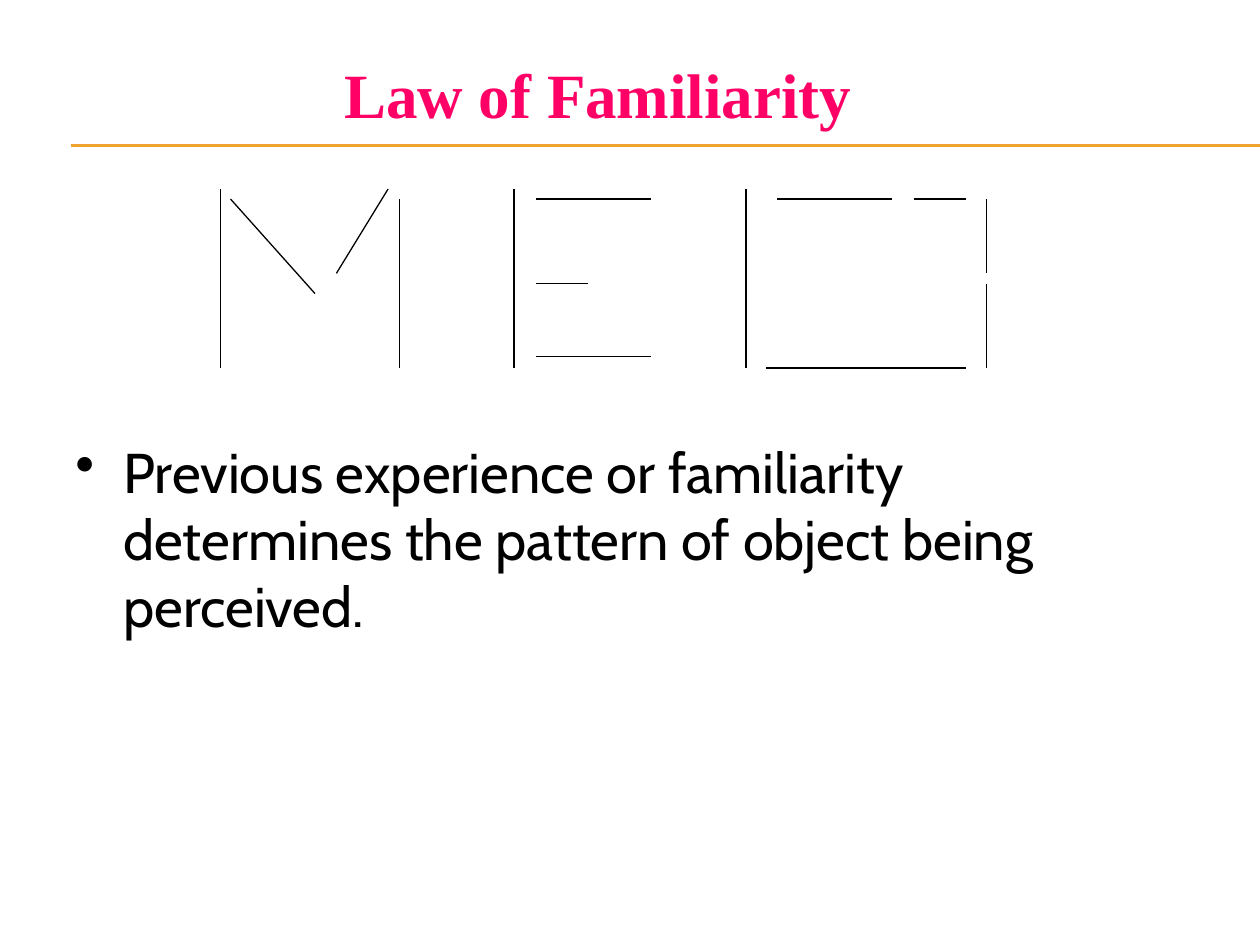
from typing import NamedTuple

from lxml import etree
from pptx import Presentation
from pptx.dml.color import RGBColor
from pptx.enum.shapes import MSO_CONNECTOR as Connector
from pptx.enum.text import MSO_ANCHOR as Anchor, PP_ALIGN as Align
from pptx.oxml.ns import qn
from pptx.slide import Slide
from pptx.text.text import _Paragraph as Paragraph
from pptx.util import Inches, Pt

PINK = RGBColor(0xFF, 0x00, 0x66)
AMBER = RGBColor(0xF0, 0xA2, 0x2E)
BLACK = RGBColor(0x00, 0x00, 0x00)


class Stroke(NamedTuple):
    x1: float
    y1: float
    x2: float
    y2: float


class TextBlock(NamedTuple):
    text: str
    left: float
    top: float
    width: float
    height: float
    font: str
    size: int
    color: RGBColor
    bold: bool = False
    wrap: bool = True
    margin_top: float = 0.05


# Two rules that nearly coincide under the title
RULES = [Stroke(0.56, y, 10, y) for y in (1.15, 1.16)]

# Broken outlines that read as familiar letters
TOP, UPPER, BOTTOM = 1.5, 1.58, 2.92
LETTER_M = [
    Stroke(1.75, TOP, 1.75, BOTTOM),
    Stroke(1.83, UPPER, 2.5, 2.33),
    Stroke(3.08, TOP, 2.67, 2.17),
    Stroke(3.17, UPPER, 3.17, BOTTOM),
]
LETTER_E = [
    Stroke(4.08, TOP, 4.08, BOTTOM),
    Stroke(4.25, UPPER, 5.17, UPPER),
    Stroke(4.25, 2.25, 4.67, 2.25),
    Stroke(4.25, 2.83, 5.17, 2.83),
]
BROKEN_BOX = [
    Stroke(5.92, TOP, 5.92, BOTTOM),
    Stroke(6.17, UPPER, 7.08, UPPER),
    Stroke(7.25, UPPER, 7.67, UPPER),
    Stroke(7.83, UPPER, 7.83, 2.17),
    Stroke(7.83, 2.25, 7.83, BOTTOM),
    Stroke(6.08, BOTTOM, 7.67, BOTTOM),
]

TITLE = TextBlock("Law of Familiarity", 2.33, 0.33, 4.83, 0.92,
                  "Times New Roman", 36, PINK, bold=True, wrap=False,
                  margin_top=0.11)
BODY = TextBlock("Previous experience or familiarity determines the pattern "
                 "of object being perceived.", 0.5, 3.42, 9, 2,
                 "Cabin", 32, BLACK)


def draw_stroke(slide: Slide, stroke: Stroke, color: RGBColor) -> None:
    line = slide.shapes.add_connector(
        Connector.STRAIGHT, *(Inches(value) for value in stroke))
    line.line.color.rgb = color
    line.line.width = Pt(0.75)
    etree.SubElement(line._element.spPr, qn("a:effectLst"))


def draw_text(slide: Slide, block: TextBlock) -> Paragraph:
    shape = slide.shapes.add_textbox(
        Inches(block.left), Inches(block.top),
        Inches(block.width), Inches(block.height))
    frame = shape.text_frame
    frame.word_wrap = block.wrap
    frame.vertical_anchor = Anchor.TOP
    frame.margin_top = Inches(block.margin_top)
    paragraph = frame.paragraphs[0]
    run = paragraph.add_run()
    run.text = block.text
    run.font.name = block.font
    run.font.size = Pt(block.size)
    run.font.bold = block.bold
    run.font.color.rgb = block.color
    return paragraph


def add_bullet(paragraph: Paragraph, indent: float) -> None:
    properties = paragraph._p.get_or_add_pPr()
    properties.set("marL", str(Inches(indent)))
    properties.set("indent", str(-Inches(indent)))
    etree.SubElement(properties, qn("a:buChar"), char="•")


def main() -> None:
    presentation = Presentation()
    presentation.slide_width = Inches(10)
    presentation.slide_height = Inches(7.5)
    slide = presentation.slides.add_slide(presentation.slide_layouts[6])

    # Title and its rules
    for rule in RULES:
        draw_stroke(slide, rule, AMBER)
    draw_text(slide, TITLE).alignment = Align.CENTER

    # Letter figures
    for stroke in LETTER_M + LETTER_E + BROKEN_BOX:
        draw_stroke(slide, stroke, BLACK)

    # Explanation
    add_bullet(draw_text(slide, BODY), 0.38)

    presentation.save("out.pptx")


if __name__ == "__main__":
    main()
